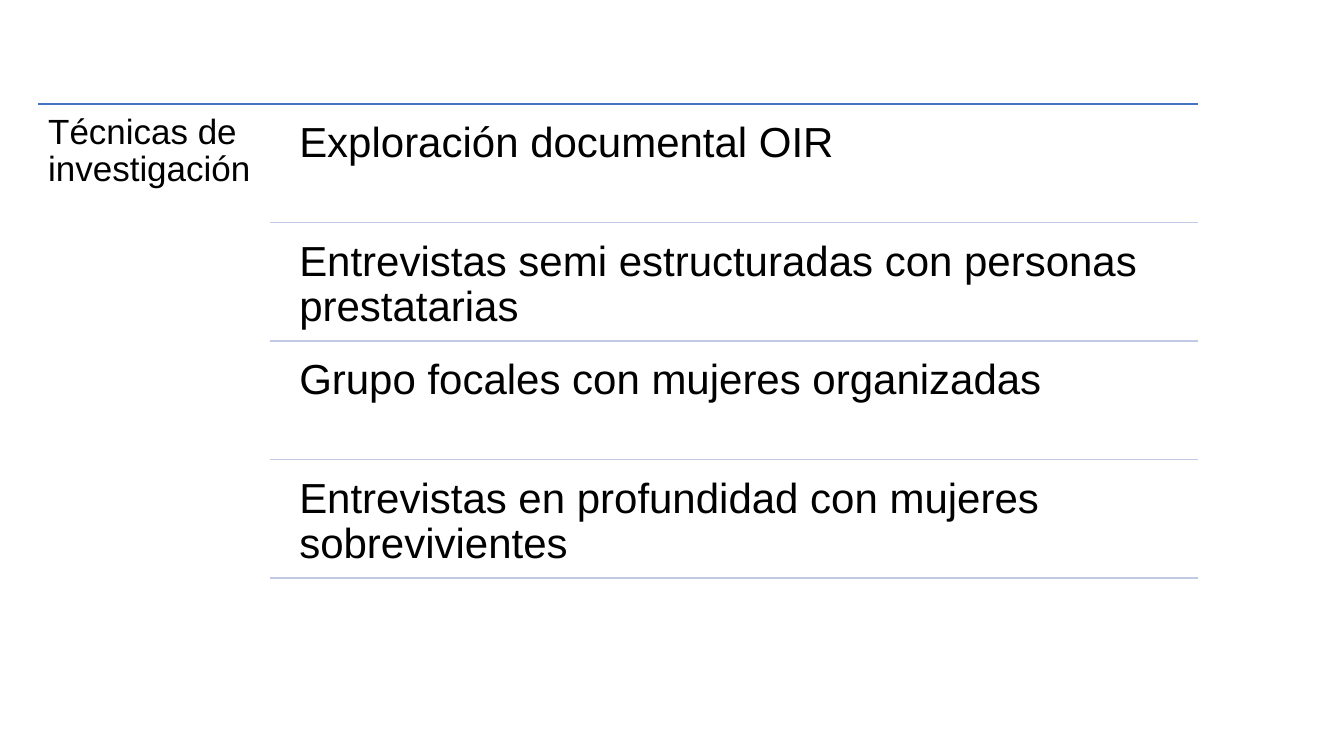
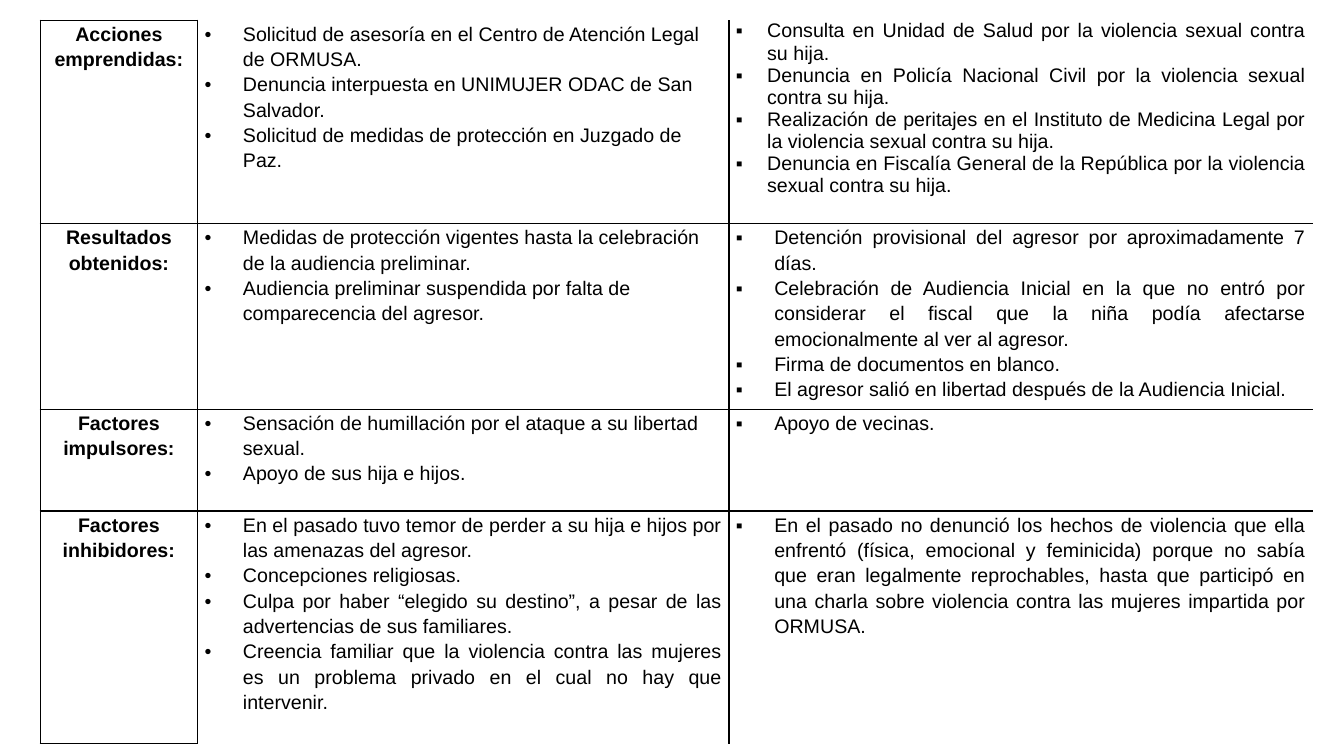
from collections import namedtuple

from lxml.etree import SubElement
from pptx import Presentation
from pptx.dml.color import RGBColor
from pptx.enum.shapes import MSO_CONNECTOR as Connector
from pptx.enum.text import MSO_ANCHOR as Anchor, PP_ALIGN as Align
from pptx.oxml.ns import qn
from pptx.util import Inches, Pt

Box = namedtuple("Box", "left top width height")

FONT = "Arial"
BLACK, BLUE, PALE_BLUE = "000000", "4472C4", "C1C9E4"
RULE_WIDTH = Pt(1)
DOT, SQUARE = "•", "▪"
INDENT, NARROW_INDENT = 0.38, 0.31

TECHNIQUES = [
    "Exploración documental OIR",
    "Entrevistas semi estructuradas con personas prestatarias",
    "Grupo focales con mujeres organizadas",
    "Entrevistas en profundidad con mujeres sobrevivientes",
]

COLUMN_WIDTHS = [1.56, 5.27, 5.79]
ROW_HEIGHTS = [2.02, 1.84, 1.01, 2.31]
CASES = [
    ("Acciones emprendidas:",
     ["Solicitud de asesoría en el Centro de Atención Legal de ORMUSA.",
      "Denuncia interpuesta en UNIMUJER ODAC de San Salvador.",
      "Solicitud de medidas de protección en Juzgado de Paz."],
     ["Consulta en Unidad de Salud por la violencia sexual contra su hija.",
      "Denuncia en Policía Nacional Civil por la violencia sexual contra su hija.",
      "Realización de peritajes en el Instituto de Medicina Legal por la "
      "violencia sexual contra su hija.",
      "Denuncia en Fiscalía General de la República por la violencia sexual "
      "contra su hija."]),
    ("Resultados obtenidos:",
     ["Medidas de protección vigentes hasta la celebración de la audiencia preliminar.",
      "Audiencia preliminar suspendida por falta de comparecencia del agresor."],
     ["Detención provisional del agresor por aproximadamente 7 días.",
      "Celebración de Audiencia Inicial en la que no entró por considerar el "
      "fiscal que la niña podía afectarse emocionalmente al ver al agresor.",
      "Firma de documentos en blanco.",
      "El agresor salió en libertad después de la Audiencia Inicial."]),
    ("Factores impulsores:",
     ["Sensación de humillación por el ataque a su libertad sexual.",
      "Apoyo de sus hija e hijos."],
     ["Apoyo de vecinas."]),
    ("Factores inhibidores:",
     ["En el pasado tuvo temor de perder a su hija e hijos por las amenazas "
      "del agresor.",
      "Concepciones religiosas.",
      "Culpa por haber “elegido su destino”, a pesar de las advertencias de "
      "sus familiares.",
      "Creencia familiar que la violencia contra las mujeres es un problema "
      "privado en el cual no hay que intervenir."],
     ["En el pasado no denunció los hechos de violencia que ella enfrentó "
      "(física, emocional y feminicida) porque no sabía que eran legalmente "
      "reprochables, hasta que participó en una charla sobre violencia contra "
      "las mujeres impartida por ORMUSA."]),
]


def color(hex_text):
    return RGBColor.from_string(hex_text)


def style_paragraph(para, size, spacing, align=Align.LEFT, bold=False):
    para.alignment = align
    para.line_spacing = spacing
    for span in para.runs:
        span.font.name = FONT
        span.font.size = Pt(size)
        span.font.bold = bold
        span.font.color.rgb = color(BLACK)


def add_bullet(para, symbol, indent):
    props = para._p.get_or_add_pPr()
    props.set("marL", str(Inches(indent)))
    props.set("indent", str(-Inches(indent)))
    SubElement(props, qn("a:buFont")).set("typeface", FONT)
    SubElement(props, qn("a:buChar")).set("char", symbol)


def add_rule(page, left, right, top, hex_text):
    rule = page.shapes.add_connector(
        Connector.STRAIGHT, Inches(left), Inches(top), Inches(right), Inches(top))
    rule.line.color.rgb = color(hex_text)
    rule.line.width = RULE_WIDTH
    SubElement(rule._element.spPr, qn("a:effectLst"))


def add_label(page, box, text, size, inset):
    frame = page.shapes.add_textbox(*map(Inches, box)).text_frame
    frame.word_wrap = True
    frame.margin_left = frame.margin_right = Inches(inset)
    frame.margin_top = frame.margin_bottom = Inches(inset)
    frame.text = text
    style_paragraph(frame.paragraphs[0], size, 0.9)


def draw_ruled_list(page, box, heading, items):
    """A heading in the first fifth, and items each closed by a rule."""
    heading_width = box.width / 5
    right = box.left + box.width
    # Each gap is a twentieth of a row; there is one more gap than rows
    row = box.height / (len(items) + (len(items) + 1) / 20)
    gap = row / 20
    text_left = box.left + heading_width + 3 * gap

    add_rule(page, box.left, right, box.top, BLUE)
    add_label(page, Box(box.left, box.top, heading_width, box.height),
              heading, 25, 0.1)
    for index, item in enumerate(items):
        top = box.top + gap + index * (row + gap)
        add_label(page, Box(text_left, top, right - text_left, row), item, 30, 0.12)
        add_rule(page, box.left + heading_width, right, top + row, PALE_BLUE)


def set_borders(cell, shown):
    props = cell._tc.get_or_add_tcPr()
    for side in "LRTB":
        line = SubElement(props, qn(f"a:ln{side}"))
        if side in shown:
            line.set("w", str(RULE_WIDTH))
            fill = SubElement(line, qn("a:solidFill"))
            SubElement(fill, qn("a:srgbClr")).set("val", BLACK)
        else:
            SubElement(line, qn("a:noFill"))


def fill_cell(cell, lines, symbol=None, indent=INDENT, **style):
    cell.margin_left = cell.margin_right = Inches(0.07)
    cell.margin_top = cell.margin_bottom = 0
    cell.vertical_anchor = Anchor.TOP
    cell.text_frame.text = "\n".join(lines)
    for para in cell.text_frame.paragraphs:
        if symbol:
            add_bullet(para, symbol, indent)
        style_paragraph(para, 14, **style)


def draw_case_table(page, box, cases):
    """Row headings and two bulleted columns, open at the outer right."""
    frame = page.shapes.add_table(
        len(cases), len(COLUMN_WIDTHS), *map(Inches, box))
    table = frame.table
    table.first_row = table.horz_banding = False
    for column, width in zip(table.columns, COLUMN_WIDTHS):
        column.width = Inches(width)
    for row, height in zip(table.rows, ROW_HEIGHTS):
        row.height = Inches(height)

    last_row, last_column = len(cases) - 1, len(COLUMN_WIDTHS) - 1
    for r, (heading, first_case, second_case) in enumerate(cases):
        fill_cell(table.cell(r, 0), [heading], spacing=1.15,
                  align=Align.CENTER, bold=True)
        fill_cell(table.cell(r, 1), first_case, DOT, spacing=1.15,
                  align=Align.JUSTIFY if r == last_row else Align.LEFT)
        # The opening row of the second case is set tighter
        fill_cell(table.cell(r, 2), second_case, SQUARE,
                  NARROW_INDENT if r == 0 else INDENT,
                  spacing=1.0 if r == 0 else 1.15, align=Align.JUSTIFY)
        for c in range(last_column + 1):
            shown = "L"
            shown += "R" if c < last_column else ""
            shown += "T" if r > 0 or c == 0 else ""
            shown += "B" if r < last_row or c == 0 else ""
            set_borders(table.cell(r, c), shown)
            table.cell(r, c).fill.background()


def main():
    deck = Presentation()
    deck.slide_width, deck.slide_height = Inches(13.33), Inches(7.5)
    blank = deck.slide_layouts[6]

    # Research techniques
    draw_ruled_list(deck.slides.add_slide(blank), Box(0.38, 1.03, 11.5, 4.76),
                    "Técnicas de investigación", TECHNIQUES)
    # Comparison of the two cases
    draw_case_table(deck.slides.add_slide(blank),
                    Box(0.4, 0.2, sum(COLUMN_WIDTHS), sum(ROW_HEIGHTS)), CASES)
    deck.save("out.pptx")


if __name__ == "__main__":
    main()
